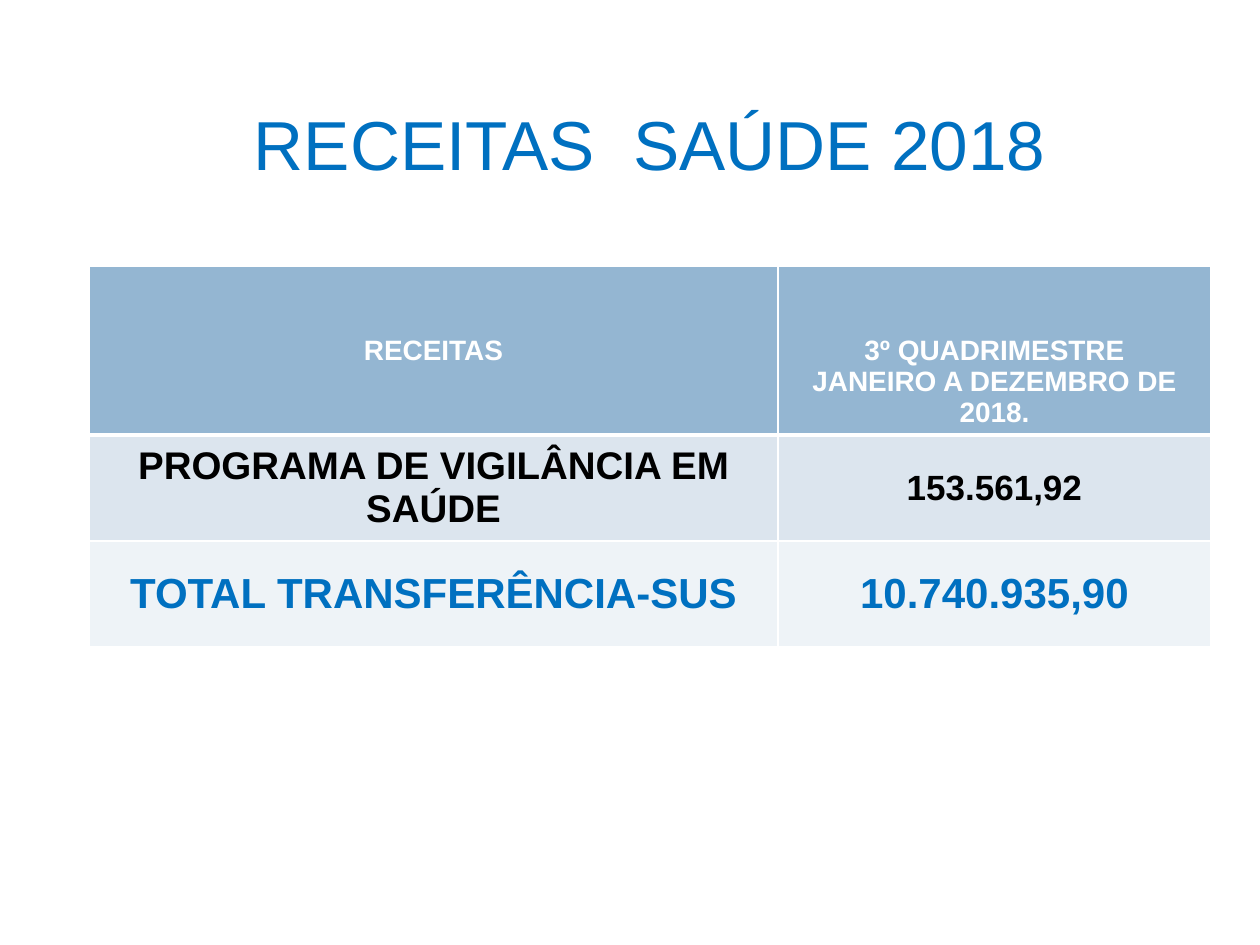
from lxml import etree
from pptx import Presentation
from pptx.dml.color import RGBColor
from pptx.enum.text import MSO_ANCHOR, MSO_AUTO_SIZE, PP_ALIGN
from pptx.oxml.ns import qn
from pptx.util import Pt

MID, LOW = MSO_ANCHOR.MIDDLE, MSO_ANCHOR.BOTTOM
CENTER = PP_ALIGN.CENTER
PX = 914400 // 126

THEME = {
    "font": "Arial",
    "white": "FFFFFF", "black": "000000", "blue": "0070C0",
    "head": "94B6D2", "band": "DCE5EE", "pale": "EEF3F7",
    "title": 39.6, "label": 16, "value": 20, "item": 22, "total": 24,
}

TITLE = "RECEITAS  SAÚDE 2018"
TITLE_BOX = (78, 98, 1144, 90)
TABLE_AT = (89, 266)
COLS = (689, 433)

# Row: height, fill, text colour, bottom line in points, cells (lines, size, anchor)
ROWS = [
    (169, "head", "white", 3, [
        (["RECEITAS"], "label", MID),
        (["3º QUADRIMESTRE", "JANEIRO A DEZEMBRO DE 2018."], "label", LOW)]),
    (106, "band", "black", 1, [
        (["PROGRAMA DE VIGILÂNCIA EM SAÚDE"], "item", MID),
        (["153.561,92"], "value", MID)]),
    (106, "pale", "blue", 1, [
        (["TOTAL TRANSFERÊNCIA-SUS"], "total", MID),
        (["10.740.935,90"], "total", MID)]),
]


def color(name):
    return RGBColor.from_string(THEME[name])


def write(frame, lines, size, tint, bold):
    for i, line in enumerate(lines):
        para = frame.paragraphs[0] if i == 0 else frame.add_paragraph()
        para.alignment = CENTER
        run = para.add_run()
        run.text = line
        font = run.font
        font.name, font.size, font.bold = THEME["font"], Pt(THEME[size]), bold
        font.color.rgb = color(tint)


def border(cell, top, bottom):
    """Draw white lines on all four sides; widths are in points."""
    props = cell._tc.get_or_add_tcPr()
    for side, width in (("L", 1), ("R", 1), ("T", top), ("B", bottom)):
        line = etree.SubElement(props, qn("a:ln" + side), w=str(Pt(width)))
        fill = etree.SubElement(line, qn("a:solidFill"))
        etree.SubElement(fill, qn("a:srgbClr"), val=THEME["white"])


def add_title(slide):
    title = slide.shapes.title
    title.left, title.top, title.width, title.height = (n * PX for n in TITLE_BOX)
    frame = title.text_frame
    frame.word_wrap = True
    frame.auto_size = MSO_AUTO_SIZE.NONE
    frame.vertical_anchor = MID
    write(frame, [TITLE], "title", "blue", False)


def add_grid(slide):
    left, top = TABLE_AT
    high = sum(row[0] for row in ROWS)
    table = slide.shapes.add_table(len(ROWS), len(COLS), left * PX, top * PX,
                                   sum(COLS) * PX, high * PX).table
    for col, width in zip(table.columns, COLS):
        col.width = width * PX
    above = 1
    for r, (height, fill, tint, below, cells) in enumerate(ROWS):
        table.rows[r].height = height * PX
        for c, (lines, size, anchor) in enumerate(cells):
            cell = table.cell(r, c)
            border(cell, above, below)
            cell.fill.solid()
            cell.fill.fore_color.rgb = color(fill)
            cell.vertical_anchor = anchor
            write(cell.text_frame, lines, size, tint, True)
        above = below


def main():
    deck = Presentation()
    deck.slide_width, deck.slide_height = 1260 * PX, 945 * PX
    slide = deck.slides.add_slide(deck.slide_layouts[5])
    add_title(slide)
    add_grid(slide)
    deck.save("out.pptx")


if __name__ == "__main__":
    main()
